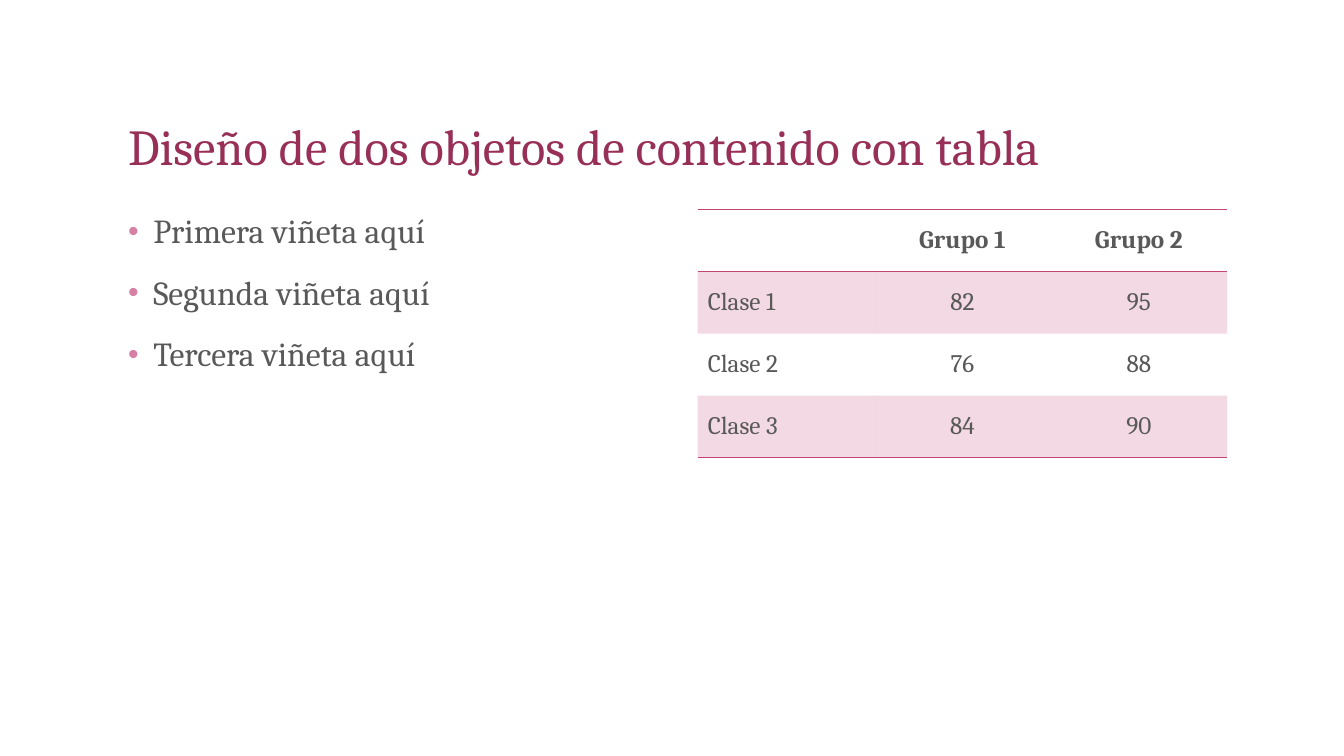
from lxml import etree
from pptx import Presentation
from pptx.dml.color import RGBColor
from pptx.enum.text import MSO_ANCHOR, MSO_AUTO_SIZE, PP_ALIGN
from pptx.oxml.ns import qn
from pptx.util import Inches, Pt

LEFT, CENTER = PP_ALIGN.LEFT, PP_ALIGN.CENTER
TOP, MIDDLE, BOTTOM = MSO_ANCHOR.TOP, MSO_ANCHOR.MIDDLE, MSO_ANCHOR.BOTTOM
NO_FIT = MSO_AUTO_SIZE.NONE

PLUM = RGBColor(0x97, 0x2F, 0x57)
ROSE = RGBColor(0xC4, 0x44, 0x75)
PINK = RGBColor(0xD6, 0x80, 0xA5)
GRAY = RGBColor(0x59, 0x59, 0x59)
WHITE = RGBColor(0xFF, 0xFF, 0xFF)

FONT = "Cambria"
TITLE_FORMAT = {"name": FONT, "size": Pt(36), "bold": False}
BULLET_FORMAT = {"name": FONT, "size": Pt(24), "bold": False}
CELL_FORMAT = {"name": FONT, "size": Pt(18), "bold": False}
HEADER_FORMAT = {**CELL_FORMAT, "bold": True}

TITLE_BOX = (1.17, 0.5, 11, 1.3)
LIST_BOX = (1.17, 2.08, 5.25, 4.67)
TABLE_BOX = (6.92, 2.08, 5.25, 2.46)

TITLE = "Diseño de dos objetos de contenido con tabla"
BULLETS = ["Primera viñeta aquí", "Segunda viñeta aquí", "Tercera viñeta aquí"]
SCORES = [
    ["", "Grupo 1", "Grupo 2"],
    ["Clase 1", "82", "95"],
    ["Clase 2", "76", "88"],
    ["Clase 3", "84", "90"],
]
RULED_EDGES = {0, 1, len(SCORES)}
NO_GRID_STYLE = "{2D5ABB26-0587-4C30-8999-92F81FD0307C}"


def set_font(font, values, color):
    for name, value in values.items():
        setattr(font, name, value)
    font.color.rgb = color


def place(shape, box, anchor):
    shape.left, shape.top, shape.width, shape.height = map(Inches, box)
    frame = shape.text_frame
    frame.auto_size = NO_FIT
    frame.word_wrap = True
    frame.vertical_anchor = anchor
    return frame


def add_title(slide, box):
    frame = place(slide.shapes.title, box, BOTTOM)
    frame.text = TITLE
    para = frame.paragraphs[0]
    para.alignment = LEFT
    para.line_spacing = 0.9
    set_font(para.runs[0].font, TITLE_FORMAT, PLUM)


def add_bullet(para):
    properties = para._p.get_or_add_pPr()
    indent = Inches(0.25)
    properties.set("marL", str(indent))
    properties.set("indent", str(-indent))
    color = etree.SubElement(properties, qn("a:buClr"))
    etree.SubElement(color, qn("a:srgbClr"), val=str(PINK))
    etree.SubElement(properties, qn("a:buSzPct"), val="90000")
    etree.SubElement(properties, qn("a:buFont"), typeface="Arial")
    etree.SubElement(properties, qn("a:buChar"), char="•")


def add_list(slide, box):
    frame = place(slide.placeholders[1], box, TOP)
    frame.text = "\n".join(BULLETS)
    for index, para in enumerate(frame.paragraphs):
        add_bullet(para)
        para.alignment = LEFT
        para.line_spacing = 0.9
        para.space_before = Pt(18 if index else 0)
        set_font(para.runs[0].font, BULLET_FORMAT, GRAY)


def set_borders(cell, row):
    properties = cell._tc.get_or_add_tcPr()
    edges = {"a:lnL": None, "a:lnR": None, "a:lnT": row, "a:lnB": row + 1}
    for tag, edge in edges.items():
        line = etree.SubElement(properties, qn(tag), w=str(Pt(1)))
        if edge in RULED_EDGES:
            fill = etree.SubElement(line, qn("a:solidFill"))
            etree.SubElement(fill, qn("a:srgbClr"), val=str(ROSE))
        else:
            etree.SubElement(line, qn("a:noFill"))


def fill_cell(cell, banded):
    if not banded:
        cell.fill.background()
        return
    cell.fill.solid()
    cell.fill.fore_color.rgb = ROSE
    color = cell._tc.tcPr.find(qn("a:solidFill"))[0]
    etree.SubElement(color, qn("a:alpha"), val="20000")


def add_score_table(slide, box):
    left, top, width, height = map(Inches, box)
    row_count, column_count = len(SCORES), len(SCORES[0])
    frame = slide.shapes.add_table(row_count, column_count, left, top, width, height)
    table = frame.table
    table._tbl.tblPr.find(qn("a:tableStyleId")).text = NO_GRID_STYLE
    for row, texts in enumerate(SCORES):
        for column, text in enumerate(texts):
            cell = table.cell(row, column)
            set_borders(cell, row)
            fill_cell(cell, row % 2 == 1)
            cell.vertical_anchor = MIDDLE
            cell.text = text
            para = cell.text_frame.paragraphs[0]
            para.alignment = CENTER if column else LEFT
            set_font(para.font, CELL_FORMAT if row else HEADER_FORMAT, GRAY)
            for span in para.runs:
                set_font(span.font, CELL_FORMAT if row else HEADER_FORMAT, GRAY)


def main():
    deck = Presentation()
    deck.slide_width, deck.slide_height = Inches(13.33), Inches(7.5)
    slide = deck.slides.add_slide(deck.slide_layouts[1])
    slide.background.fill.solid()
    slide.background.fill.fore_color.rgb = WHITE
    add_title(slide, TITLE_BOX)
    add_list(slide, LIST_BOX)
    add_score_table(slide, TABLE_BOX)
    deck.save("out.pptx")


if __name__ == "__main__":
    main()
